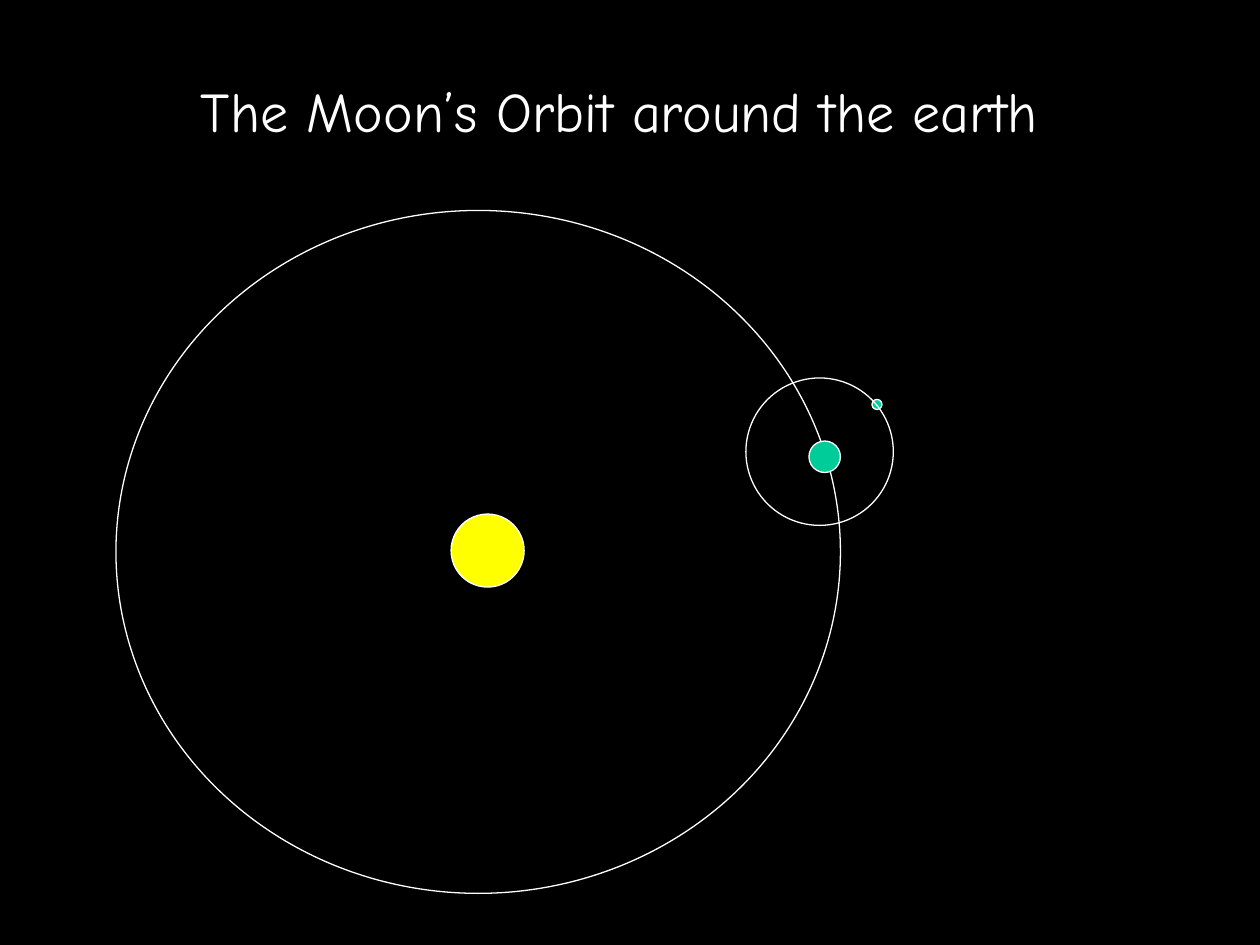
from dataclasses import dataclass
from typing import Optional

from pptx import Presentation
from pptx.dml.color import RGBColor
from pptx.enum.shapes import MSO_SHAPE
from pptx.enum.text import MSO_ANCHOR, PP_ALIGN
from pptx.util import Inches, Pt

BLACK = RGBColor(0x00, 0x00, 0x00)
WHITE = RGBColor(0xFF, 0xFF, 0xFF)
YELLOW = RGBColor(0xFF, 0xFF, 0x00)
GREEN = RGBColor(0x00, 0xCC, 0x99)


@dataclass(frozen=True)
class Ellipse:
    left: float
    top: float
    width: float
    height: float
    fill: Optional[RGBColor] = None


EARTH_ORBIT = Ellipse(0.92, 1.67, 5.75, 5.42)
SUN = Ellipse(3.58, 4.08, 0.58, 0.58, YELLOW)
EARTH = Ellipse(6.42, 3.5, 0.25, 0.25, GREEN)
MOON = Ellipse(6.92, 3.17, 0.08, 0.08, GREEN)
MOON_ORBIT = Ellipse(5.92, 3, 1.17, 1.17)


def set_title(slide, text: str) -> None:
    title = slide.shapes.title
    title.left, title.top = Inches(0.67), Inches(0.25)
    title.width, title.height = Inches(8.5), Inches(1.25)
    frame = title.text_frame
    frame.word_wrap = True
    frame.vertical_anchor = MSO_ANCHOR.MIDDLE
    paragraph = frame.paragraphs[0]
    paragraph.alignment = PP_ALIGN.CENTER
    run = paragraph.add_run()
    run.text = text
    run.font.name = "Comic Neue"
    run.font.size = Pt(32)
    run.font.color.rgb = WHITE


def draw_ellipse(slide, ellipse: Ellipse) -> None:
    shape = slide.shapes.add_shape(
        MSO_SHAPE.OVAL,
        Inches(ellipse.left),
        Inches(ellipse.top),
        Inches(ellipse.width),
        Inches(ellipse.height),
    )
    shape.shadow.inherit = False
    if ellipse.fill is None:
        shape.fill.background()
    else:
        shape.fill.solid()
        shape.fill.fore_color.rgb = ellipse.fill
    shape.line.color.rgb = WHITE
    shape.line.width = Pt(0.75)


def main() -> None:
    presentation = Presentation()
    presentation.slide_width = Inches(10)
    presentation.slide_height = Inches(7.5)
    slide = presentation.slides.add_slide(presentation.slide_layouts[5])
    slide.background.fill.solid()
    slide.background.fill.fore_color.rgb = BLACK
    set_title(slide, "The Moon’s Orbit around the earth")
    for ellipse in (EARTH_ORBIT, SUN, EARTH, MOON, MOON_ORBIT):
        draw_ellipse(slide, ellipse)
    presentation.save("out.pptx")


if __name__ == "__main__":
    main()
